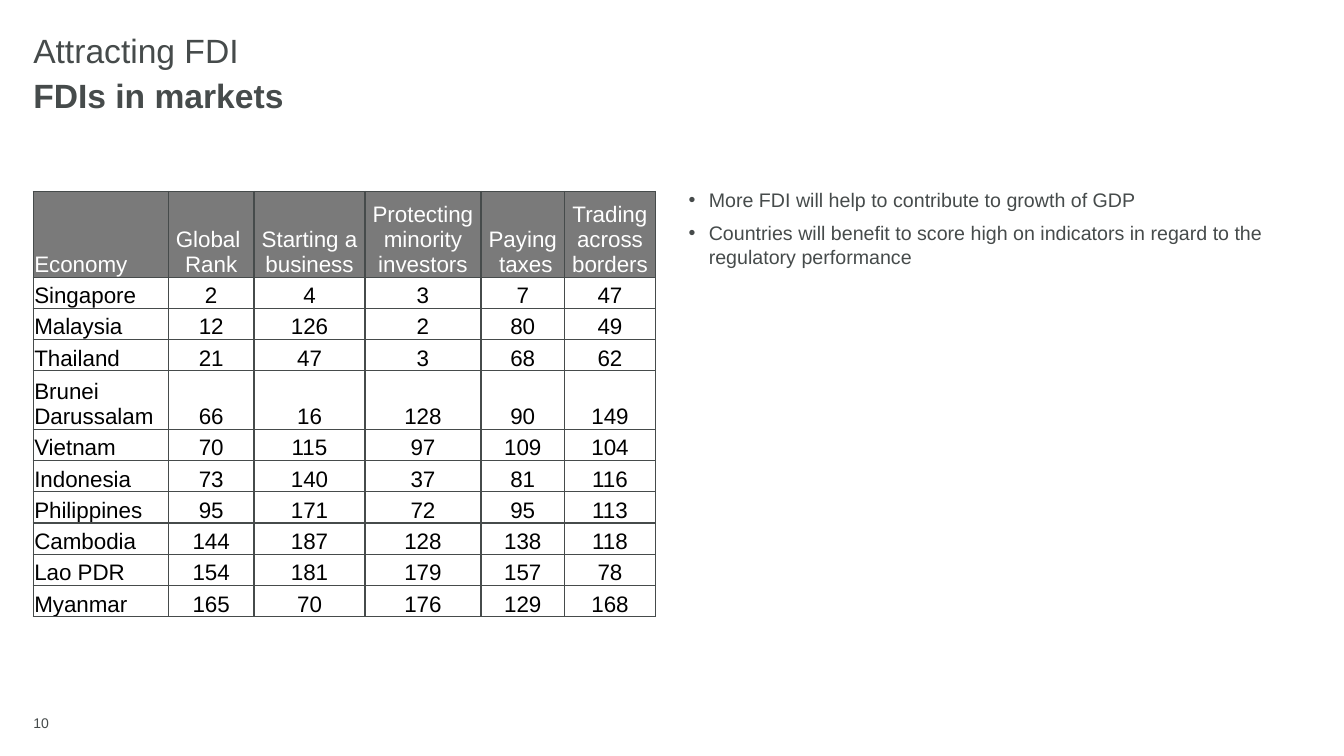
from lxml.etree import SubElement
from pptx import Presentation
from pptx.dml.color import RGBColor
from pptx.enum.text import MSO_ANCHOR, PP_ALIGN
from pptx.oxml.ns import qn
from pptx.util import Inches, Pt

# Content
TITLE = "Attracting FDI"
SUB = "FDIs in markets"
PAGE = "10"
NOTES = [
    ["More FDI will help to contribute to growth of GDP"],
    ["Countries will benefit to s",
     "core high on indicators in regard to the regulatory performance"],
]
HEAD = ("Economy", "Global \nRank", "Starting a business",
        "Protecting minority investors", "Paying\n taxes",
        "Trading across borders")
BODY = [
    ("Singapore", 2, 4, 3, 7, 47),
    ("Malaysia", 12, 126, 2, 80, 49),
    ("Thailand", 21, 47, 3, 68, 62),
    ("Brunei Darussalam", 66, 16, 128, 90, 149),
    ("Vietnam", 70, 115, 97, 109, 104),
    ("Indonesia", 73, 140, 37, 81, 116),
    ("Philippines", 95, 171, 72, 95, 113),
    ("Cambodia", 144, 187, 128, 138, 118),
    ("Lao PDR", 154, 181, 179, 157, 78),
    ("Myanmar", 165, 70, 176, 129, 168),
]

# Style and measures
INK = RGBColor(0x46, 0x4B, 0x4B)
GRAY = RGBColor(0x7A, 0x7A, 0x7A)
WHITE = RGBColor(0xFF, 0xFF, 0xFF)
BLACK = RGBColor(0, 0, 0)
FONT = "Arial"
LEFT, WIDE = 0.33, 6.18
COLS = (1.34, 0.85, 1.1, 1.15, 0.83, 0.9)
TALL = {0: 0.85, 4: 0.58}
ROW = 0.31


def add_run(para, text, size, color, bold=False):
    run = para.add_run()
    run.text = text
    font = run.font
    font.name, font.size, font.bold = FONT, Pt(size), bold
    font.color.rgb = color


def add_text(slide, box, paras, size, anchor=MSO_ANCHOR.MIDDLE, pad=0,
             line=1.0, after=6, bold=False, bullet=False):
    frame = slide.shapes.add_textbox(*map(Inches, box)).text_frame
    frame.word_wrap = True
    frame.vertical_anchor = anchor
    frame.margin_left = frame.margin_right = 0
    frame.margin_top = frame.margin_bottom = Inches(pad)
    for i, runs in enumerate(paras):
        para = frame.add_paragraph() if i else frame.paragraphs[0]
        if bullet:
            props = para._p.get_or_add_pPr()
            props.set("marL", str(Inches(0.2)))
            props.set("indent", str(Inches(-0.2)))
            SubElement(props, qn("a:buFont"), typeface=FONT)
            SubElement(props, qn("a:buChar"), char="•")
        para.line_spacing = line
        para.space_after = Pt(after)
        for text in runs:
            add_run(para, text, size, INK, bold)


def add_edges(cell):
    props = cell._tc.get_or_add_tcPr()
    for side in ("lnL", "lnR", "lnT", "lnB"):
        edge = SubElement(props, qn(f"a:{side}"), w=str(Pt(1)))
        fill = SubElement(edge, qn("a:solidFill"))
        SubElement(fill, qn("a:srgbClr"), val=str(INK))


def fill_cell(cell, text, head, first):
    add_edges(cell)
    if head:
        cell.fill.solid()
        cell.fill.fore_color.rgb = GRAY
    else:
        cell.fill.background()
    cell.vertical_anchor = MSO_ANCHOR.BOTTOM
    cell.margin_left = cell.margin_right = cell.margin_top = Inches(0.01)
    cell.margin_bottom = 0
    frame = cell.text_frame
    for i, part in enumerate(text.split("\n")):
        para = frame.add_paragraph() if i else frame.paragraphs[0]
        para.alignment = PP_ALIGN.LEFT if first else PP_ALIGN.CENTER
        add_run(para, part, 16, WHITE if head else BLACK)


def add_ranks(slide):
    rows = [HEAD] + BODY
    highs = [TALL.get(i, ROW) for i in range(len(rows))]
    box = (LEFT, 1.9, sum(COLS), sum(highs))
    table = slide.shapes.add_table(
        len(rows), len(COLS), *map(Inches, box)).table
    table.horz_banding = False
    for col, wide in zip(table.columns, COLS):
        col.width = Inches(wide)
    for r, (row, high) in enumerate(zip(rows, highs)):
        table.rows[r].height = Inches(high)
        for c, item in enumerate(row):
            fill_cell(table.cell(r, c), str(item), r == 0, c == 0)


def main():
    deck = Presentation()
    deck.slide_width, deck.slide_height = Inches(13.33), Inches(7.5)
    slide = deck.slides.add_slide(deck.slide_layouts[6])

    # Headings and page number
    add_text(slide, (LEFT, 0.33, WIDE, 0.39), [[TITLE]], 24,
             line=0.9, after=0)
    add_text(slide, (LEFT, 0.74, WIDE, 0.39), [[SUB]], 24,
             line=1.05, bold=True)
    add_text(slide, (LEFT, 7.02, 0.98, 0.3), [[PAGE]], 10, pad=0.05)

    # Notes on the right, table on the left
    add_text(slide, (6.83, 1.85, WIDE, 4.34), NOTES, 14,
             anchor=MSO_ANCHOR.TOP, line=1.05, bullet=True)
    add_ranks(slide)
    deck.save("out.pptx")


if __name__ == "__main__":
    main()
